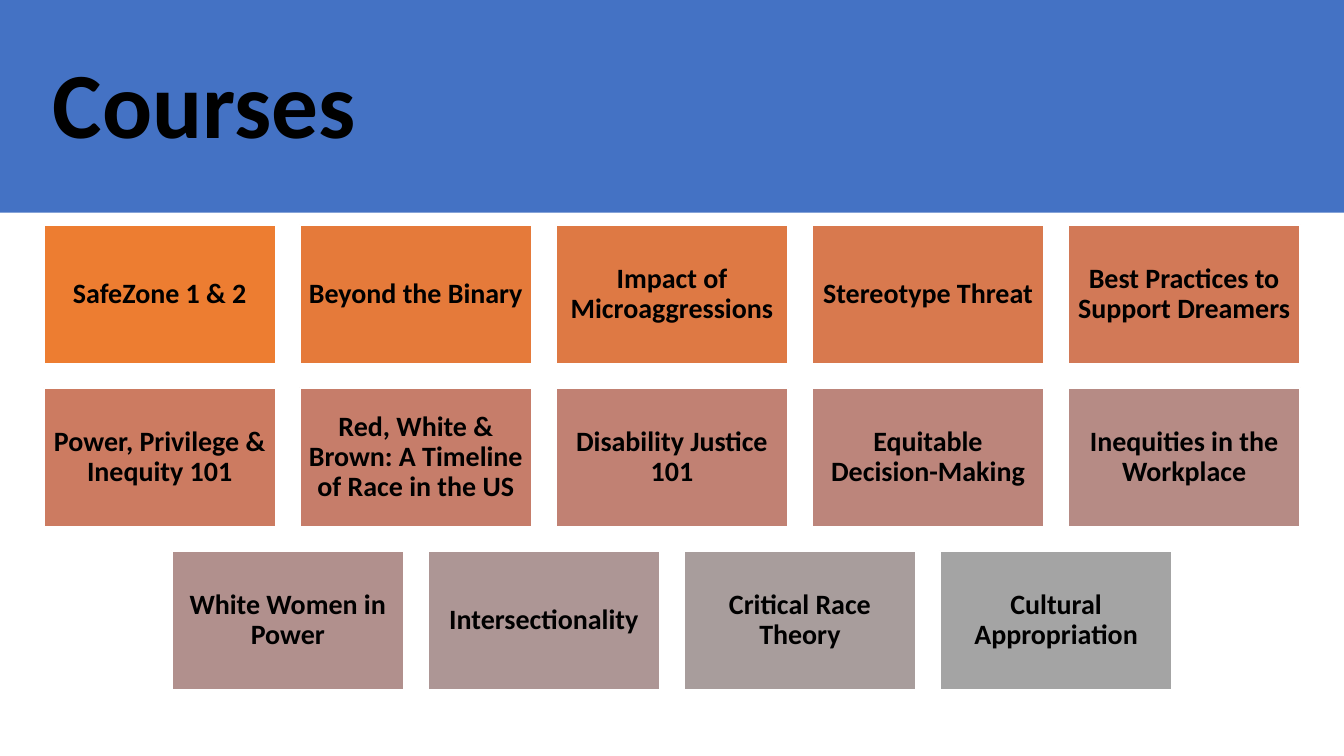
from pptx import Presentation
from pptx.dml.color import RGBColor
from pptx.enum.shapes import MSO_SHAPE
from pptx.enum.text import MSO_ANCHOR, MSO_AUTO_SIZE, PP_ALIGN
from pptx.util import Cm, Pt

RECT = MSO_SHAPE.RECTANGLE
MIDDLE = MSO_ANCHOR.MIDDLE
NO_FIT = MSO_AUTO_SIZE.NONE
LEFT, CENTER = PP_ALIGN.LEFT, PP_ALIGN.CENTER

BLACK = RGBColor(0x00, 0x00, 0x00)
WHITE = RGBColor(0xFF, 0xFF, 0xFF)
BLUE = RGBColor(0x44, 0x72, 0xC4)
FONT = "Calibri"

WIDTH, HEIGHT = 25.4, 14.29
CARD_W, CARD_H = 4.39, 2.63
STEP_X, STEP_Y = 4.84, 3.08
TOP = 4.25

ROWS = [
    [
        ("SafeZone 1 & 2", RGBColor(0xED, 0x7D, 0x31)),
        ("Beyond the Binary", RGBColor(0xE5, 0x7A, 0x3A)),
        ("Impact of Microaggressions", RGBColor(0xDE, 0x79, 0x44)),
        ("Stereotype Threat", RGBColor(0xD8, 0x79, 0x4E)),
        ("Best Practices to Support Dreamers", RGBColor(0xD2, 0x79, 0x57)),
    ],
    [
        ("Power, Privilege & Inequity 101", RGBColor(0xCC, 0x7B, 0x61)),
        ("Red, White & Brown: A Timeline of Race in the US", RGBColor(0xC6, 0x7D, 0x6A)),
        ("Disability Justice 101", RGBColor(0xC1, 0x81, 0x73)),
        ("Equitable Decision-Making", RGBColor(0xBC, 0x85, 0x7B)),
        ("Inequities in the Workplace", RGBColor(0xB6, 0x8B, 0x85)),
    ],
    [
        ("White Women in Power", RGBColor(0xB1, 0x90, 0x8D)),
        ("Intersectionality", RGBColor(0xAD, 0x96, 0x95)),
        ("Critical Race Theory", RGBColor(0xA8, 0x9D, 0x9C)),
        ("Cultural Appropriation", RGBColor(0xA4, 0xA4, 0xA4)),
    ],
]


def write(shape, text, size=15, align=CENTER, pad_x=0.15, pad_y=0.15):
    frame = shape.text_frame
    frame.text = text
    frame.word_wrap = True
    frame.auto_size = NO_FIT
    frame.vertical_anchor = MIDDLE
    frame.margin_left = frame.margin_right = Cm(pad_x)
    frame.margin_top = frame.margin_bottom = Cm(pad_y)
    para = frame.paragraphs[0]
    para.alignment = align
    para.line_spacing = 0.9
    para.space_before = Pt(0)
    font = para.runs[0].font
    font.name = FONT
    font.size = Pt(size)
    font.bold = True
    font.color.rgb = BLACK


def add_box(slide, left, top, width, height, fill):
    box = slide.shapes.add_shape(RECT, Cm(left), Cm(top), Cm(width), Cm(height))
    box.shadow.inherit = False
    box.fill.solid()
    box.fill.fore_color.rgb = fill
    box.line.fill.background()
    return box


def add_card(slide, left, top, text, fill):
    card = add_box(slide, left, top, CARD_W, CARD_H, fill)
    card.line.color.rgb = WHITE
    card.line.width = Pt(1)
    write(card, text)


def add_cards(slide):
    for row, cards in enumerate(ROWS):
        span = (len(cards) - 1) * STEP_X + CARD_W
        start = (WIDTH - span) / 2
        for col, (text, fill) in enumerate(cards):
            add_card(slide, start + col * STEP_X, TOP + row * STEP_Y, text, fill)


def add_head(slide):
    band = add_box(slide, 0, -0.02, WIDTH, 4.04, BLUE)
    title = slide.shapes.title
    title._element.addprevious(band._element)
    title.left, title.top = Cm(0.82), Cm(0.66)
    title.width, title.height = Cm(23.77), Cm(2.77)
    write(title, "Courses", size=50, align=LEFT, pad_x=0.18, pad_y=0.1)


def main():
    deck = Presentation()
    deck.slide_width, deck.slide_height = Cm(WIDTH), Cm(HEIGHT)
    slide = deck.slides.add_slide(deck.slide_layouts[5])
    add_head(slide)
    add_cards(slide)
    deck.save("out.pptx")


if __name__ == "__main__":
    main()
